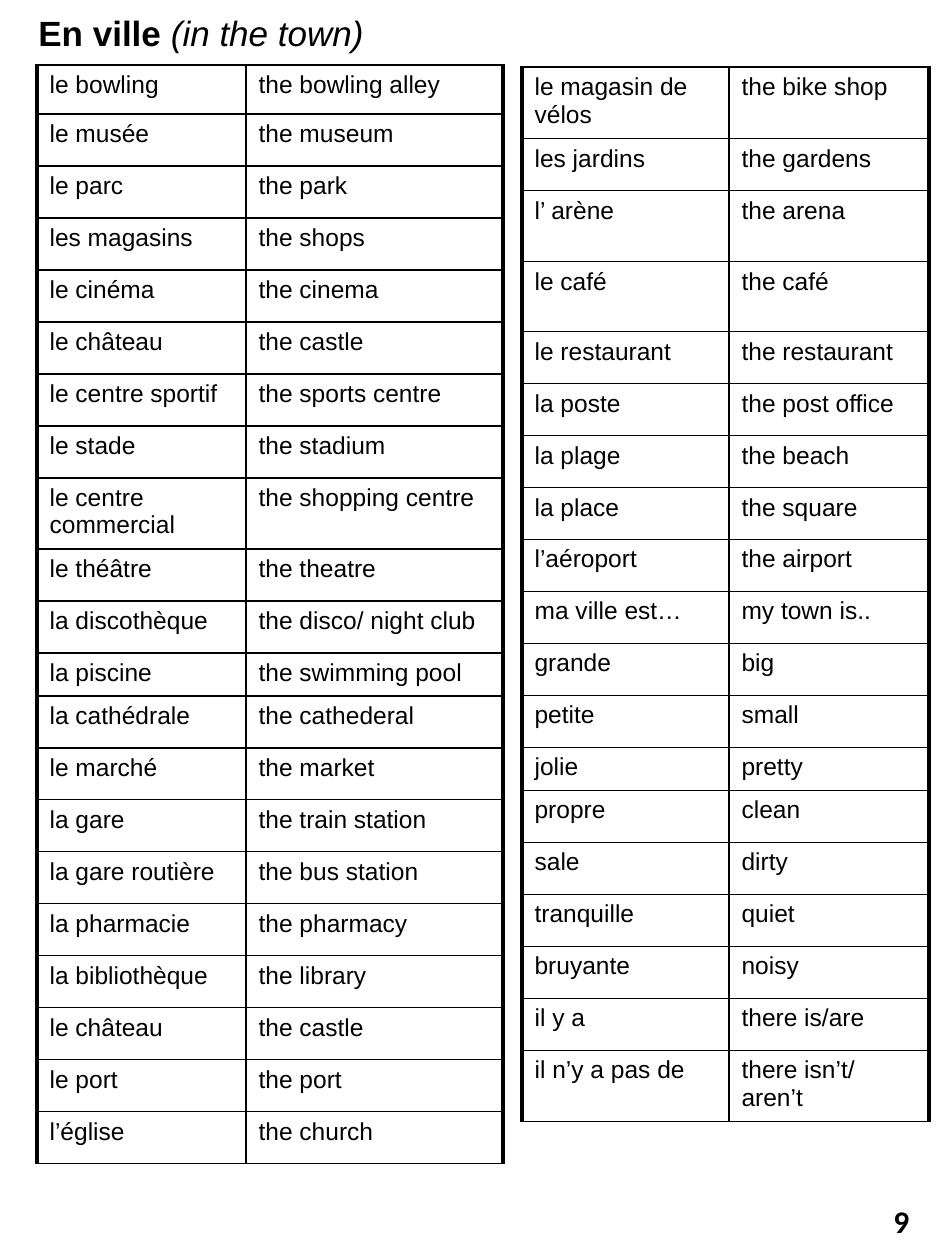
import pptx
import pptx.util
import pptx.dml.color
import pptx.enum.shapes
import pptx.enum.text
import pptx.oxml
import pptx.oxml.ns

BLACK = pptx.dml.color.RGBColor(0, 0, 0)
PX = 914400 // 126

# Row heights in px
SHORT, FIRST, NORMAL, TALL = 43, 49, 52, 71

TOWN_WORDS = [
    ("le bowling", "the bowling alley"),
    ("le musée", "the museum"),
    ("le parc", "the park"),
    ("les magasins", "the shops"),
    ("le cinéma", "the cinema"),
    ("le château", "the castle"),
    ("le centre sportif", "the sports centre"),
    ("le stade", "the stadium"),
    ("le centre commercial", "the shopping centre"),
    ("le théâtre", "the theatre"),
    ("la discothèque", "the disco/ night club"),
    ("la piscine", "the swimming pool"),
    ("la cathédrale", "the cathederal"),
    ("le marché", "the market"),
    ("la gare", "the train station"),
    ("la gare routière", "the bus station"),
    ("la pharmacie", "the pharmacy"),
    ("la bibliothèque", "the library"),
    ("le château", "the castle"),
    ("le port", "the port"),
    ("l’église", "the church"),
]
MORE_WORDS = [
    ("le magasin de vélos", "the bike shop"),
    ("les jardins", "the gardens"),
    ("l’ arène", "the arena"),
    ("le café", "the café"),
    ("le restaurant", "the restaurant"),
    ("la poste", "the post office"),
    ("la plage", "the beach"),
    ("la place", "the square"),
    ("l’aéroport", "the airport"),
    ("ma ville est…", "my town is.."),
    ("grande", "big"),
    ("petite", "small"),
    ("jolie", "pretty"),
    ("propre", "clean"),
    ("sale", "dirty"),
    ("tranquille", "quiet"),
    ("bruyante", "noisy"),
    ("il y a", "there is/are"),
    ("il n’y a pas de", "there isn’t/ aren’t"),
]


class VocabularyPage:
    font_name = "Arial"
    thin, thick = 1, 2.25

    def __init__(self, slide):
        self.slide = slide

    def style(self, font, size, bold=False, name=None):
        font.name = name or self.font_name
        font.size = pptx.util.Pt(size)
        font.bold = bold
        font.color.rgb = BLACK

    def title(self, left, top, width, height, bold_part, italic_part):
        heading = self.slide.shapes.add_textbox(
            left * PX, top * PX, width * PX, height * PX)
        frame = heading.text_frame
        frame.word_wrap = False
        frame.auto_size = pptx.enum.text.MSO_AUTO_SIZE.SHAPE_TO_FIT_TEXT
        frame.vertical_anchor = pptx.enum.text.MSO_ANCHOR.MIDDLE
        paragraph = frame.paragraphs[0]
        self.style(paragraph.font, 20)
        french = paragraph.add_run()
        french.text = bold_part
        self.style(french.font, 20, bold=True)
        english = paragraph.add_run()
        english.text = italic_part
        self.style(english.font, 20)
        english.font.italic = True

    def borders(self, cell, left, right):
        properties = cell._tc.get_or_add_tcPr()
        widths = {"lnL": left, "lnR": right, "lnT": self.thin, "lnB": self.thin}
        for position, (side, width) in enumerate(widths.items()):
            line = pptx.oxml.parse_xml(
                f'<a:{side} {pptx.oxml.ns.nsdecls("a")} w="{pptx.util.Pt(width)}">'
                f'<a:solidFill><a:srgbClr val="{BLACK}"/></a:solidFill></a:{side}>')
            properties.insert(position, line)

    def word_table(self, left, top, column_widths, words, special_heights):
        heights = [special_heights.get(french, NORMAL) for french, _ in words]
        table = self.slide.shapes.add_table(
            len(words), 2, left * PX, top * PX,
            sum(column_widths) * PX, sum(heights) * PX).table
        table.first_row = table.horz_banding = False
        for column, width in zip(table.columns, column_widths):
            column.width = width * PX
        for row, height, pair in zip(table.rows, heights, words):
            row.height = height * PX
            for index, (cell, word) in enumerate(zip(row.cells, pair)):
                cell.text = word
                self.style(cell.text_frame.paragraphs[0].font, 14)
                cell.fill.background()
                edges = (self.thin, self.thick) if index else (self.thick, self.thin)
                self.borders(cell, *edges)

    def page_number(self, left, top, width, height, number):
        badge = self.slide.shapes.add_shape(
            pptx.enum.shapes.MSO_SHAPE.ROUNDED_RECTANGLE,
            left * PX, top * PX, width * PX, height * PX)
        badge.shadow.inherit = False
        badge.fill.background()
        badge.line.fill.background()
        frame = badge.text_frame
        frame.text = number
        frame.vertical_anchor = pptx.enum.text.MSO_ANCHOR.MIDDLE
        paragraph = frame.paragraphs[0]
        paragraph.alignment = pptx.enum.text.PP_ALIGN.CENTER
        self.style(paragraph.font, 18, bold=True, name="Calibri")


def main():
    deck = pptx.Presentation()
    deck.slide_width = pptx.util.Inches(7.5)
    deck.slide_height = pptx.util.Inches(10)
    page = VocabularyPage(deck.slides.add_slide(deck.slide_layouts[6]))

    # Left word list
    page.word_table(37, 65, (209, 257), TOWN_WORDS, {
        "le bowling": FIRST, "le centre commercial": TALL, "la piscine": SHORT})

    # Heading
    page.title(26, 5, 353, 55, "En ville ", "(in the town)")

    # Right word list
    page.word_table(522, 67, (207, 200), MORE_WORDS, {
        "le magasin de vélos": TALL, "l’ arène": TALL, "le café": TALL - 1,
        "jolie": SHORT, "il n’y a pas de": TALL})

    # Page number
    page.page_number(867, 1191, 69, 59, "9")

    deck.save("out.pptx")


if __name__ == "__main__":
    main()
